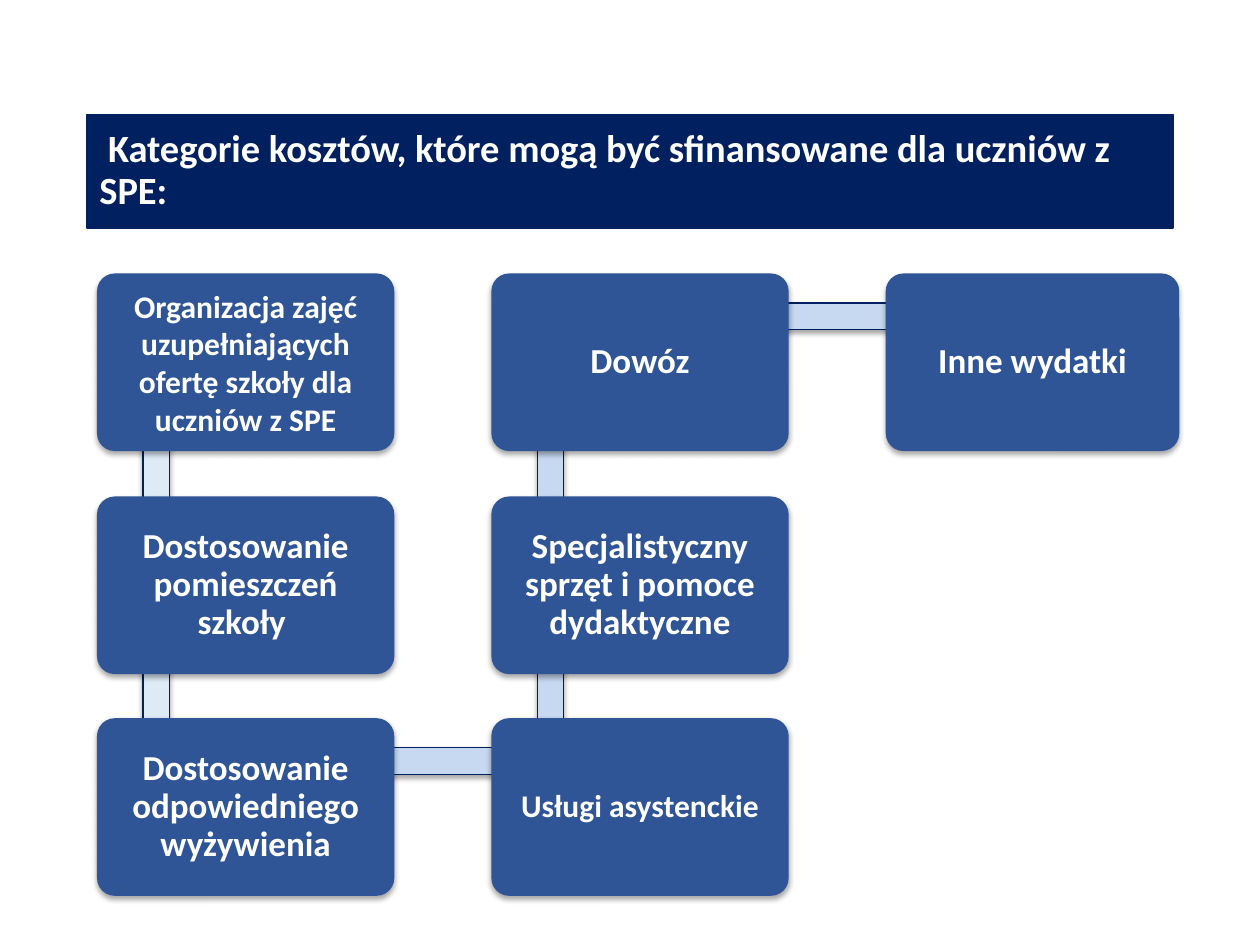
import itertools
from dataclasses import dataclass

import pptx
import pptx.dml.color
import pptx.enum.shapes
import pptx.enum.text
import pptx.oxml
import pptx.oxml.ns
import pptx.util

Inches = pptx.util.Inches
SHAPES = pptx.enum.shapes.MSO_SHAPE
ALIGN = pptx.enum.text.PP_ALIGN


@dataclass(frozen=True)
class Theme:
    font: str = "Calibri"
    navy: str = "002060"
    box: str = "2F5597"
    pale_bar: str = "DEEBF7"
    bar: str = "C6D9F1"
    text: str = "FFFFFF"
    title_size: int = 22
    large: int = 20
    small: int = 18
    line_width: float = 0.75


THEME = Theme()

SHADOW = (
    f'<a:effectLst {pptx.oxml.ns.nsdecls("a")}>'
    '<a:outerShdw blurRad="39370" dist="22860" dir="5400000" rotWithShape="0">'
    '<a:srgbClr val="000000"><a:alpha val="35000"/></a:srgbClr>'
    '</a:outerShdw></a:effectLst>'
)


class SlideBuilder:
    def __init__(self, slide, theme):
        self.slide = slide
        self.theme = theme

    def panel(self, kind, left, top, width, height, fill, line=None, shadow=True):
        shape = self.slide.shapes.add_shape(
            kind, Inches(left), Inches(top), Inches(width), Inches(height))
        shape.fill.solid()
        shape.fill.fore_color.rgb = pptx.dml.color.RGBColor.from_string(fill)
        if line:
            shape.line.color.rgb = pptx.dml.color.RGBColor.from_string(line)
            shape.line.width = pptx.util.Pt(self.theme.line_width)
        else:
            shape.line.fill.background()
        if shadow:
            shape.element.spPr.append(pptx.oxml.parse_xml(SHADOW))
        else:
            shape.shadow.inherit = False
        return shape

    def label(self, shape, text, size, align, margin, spacing):
        frame = shape.text_frame
        frame.word_wrap = True
        frame.vertical_anchor = pptx.enum.text.MSO_ANCHOR.MIDDLE
        frame.margin_left = frame.margin_right = Inches(margin)
        frame.margin_top = frame.margin_bottom = Inches(0.05)
        frame.text = text
        paragraph = frame.paragraphs[0]
        paragraph.alignment = align
        paragraph.line_spacing = spacing
        font = paragraph.runs[0].font
        font.name = self.theme.font
        font.size = pptx.util.Pt(size)
        font.bold = True
        font.color.rgb = pptx.dml.color.RGBColor.from_string(self.theme.text)

    def title(self, text, left, top, width, height):
        banner = self.panel(SHAPES.RECTANGLE, left, top, width, height,
                            self.theme.navy, self.theme.navy, shadow=False)
        self.label(banner, text, self.theme.title_size, ALIGN.LEFT, 0.1, 0.9)

    def bar(self, start, end, thickness, fill):
        """Band between two points on a common row or column."""
        (x1, x2), (y1, y2) = (sorted(pair) for pair in zip(start, end))
        half = thickness / 2
        if x1 == x2:
            area = (x1 - half, y1, thickness, y2 - y1)
        else:
            area = (x1, y1 - half, x2 - x1, thickness)
        self.panel(SHAPES.RECTANGLE, *area, fill, self.theme.navy)

    def box(self, text, size, spacing, left, top, width, height):
        card = self.panel(SHAPES.ROUNDED_RECTANGLE, left, top, width, height,
                          self.theme.box)
        card.adjustments[0] = 0.1
        self.label(card, text, size, ALIGN.CENTER, 0.12, spacing)


# Categories in order along the winding path: column, row, text, size, spacing
CATEGORIES = [
    (0, 0, "Organizacja zajęć uzupełniających ofertę szkoły dla uczniów z SPE",
     THEME.small, 1.0),
    (0, 1, "Dostosowanie pomieszczeń szkoły ", THEME.large, 0.9),
    (0, 2, "Dostosowanie odpowiedniego wyżywienia", THEME.large, 0.9),
    (1, 2, "Usługi asystenckie", THEME.small, 0.9),
    (1, 1, "Specjalistyczny sprzęt i pomoce dydaktyczne", THEME.large, 0.9),
    (1, 0, "Dowóz", THEME.large, 0.9),
    (2, 0, "Inne wydatki", THEME.large, 0.9),
]
COLUMN_LEFTS = [0.77, 3.9, 7.03]
COLUMN_WIDTHS = [2.36, 2.36, 2.33]
ROW_TOPS = [2.17, 3.94, 5.7]
BOX_HEIGHT = 1.41
BAR_THICKNESS = 0.21


def bar_anchor(column, row):
    return COLUMN_LEFTS[column] + 0.47, ROW_TOPS[row] + 0.34


def main():
    presentation = pptx.Presentation()
    presentation.slide_width = Inches(10)
    presentation.slide_height = Inches(7.5)
    slide = presentation.slides.add_slide(presentation.slide_layouts[6])
    builder = SlideBuilder(slide, THEME)

    # Title banner
    builder.title(" Kategorie kosztów, które mogą być sfinansowane dla uczniów z SPE:",
                  0.69, 0.91, 8.62, 0.9)

    # Bars linking consecutive categories, partly covered by the boxes
    for current, following in itertools.pairwise(CATEGORIES):
        fill = THEME.pale_bar if following[0] == 0 else THEME.bar
        builder.bar(bar_anchor(*current[:2]), bar_anchor(*following[:2]),
                    BAR_THICKNESS, fill)

    # Category boxes
    for column, row, text, size, spacing in CATEGORIES:
        builder.box(text, size, spacing, COLUMN_LEFTS[column], ROW_TOPS[row],
                    COLUMN_WIDTHS[column], BOX_HEIGHT)

    presentation.save("out.pptx")


if __name__ == "__main__":
    main()
